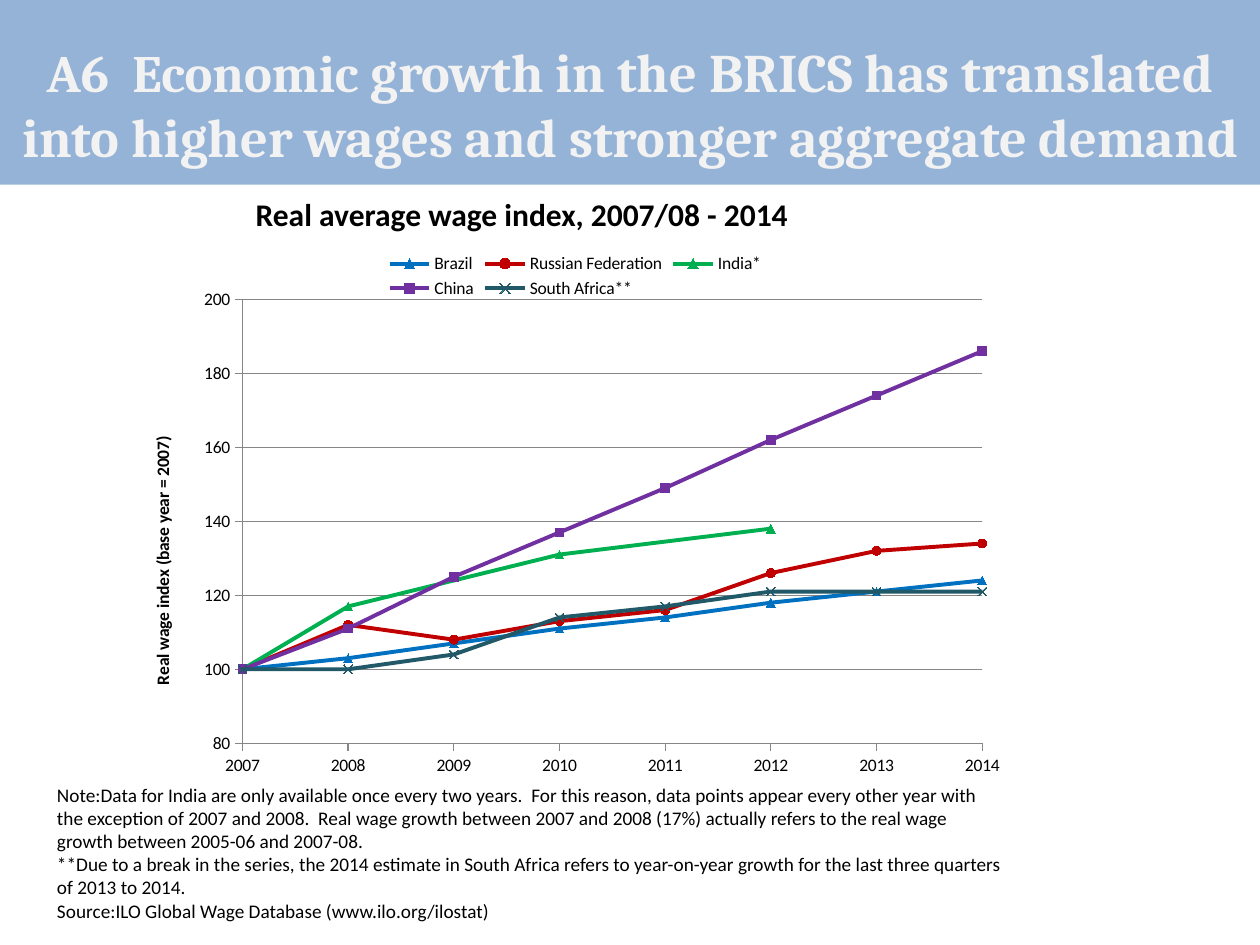
from dataclasses import dataclass

from lxml import etree
from pptx import Presentation
from pptx import util as u
from pptx.chart.data import CategoryChartData
from pptx.dml.color import RGBColor
from pptx.enum import chart as kinds, shapes, text
from pptx.oxml.ns import qn


@dataclass(frozen=True)
class Theme:
    banner: str = "95B3D7"
    light: str = "F2F2F2"
    ink: str = "000000"
    grid: str = "868686"
    heading_font: str = "Cambria"
    body_font: str = "Calibri"
    label_size: int = 30
    heading_size: int = 31
    caption_size: int = 18
    note_size: int = 11
    chart_size: int = 10
    line_width: float = 2.25
    marker_size: int = 5


YEARS = [str(year) for year in range(2007, 2015)]
MARK = kinds.XL_MARKER_STYLE
COUNTRIES = [
    ("Brazil", "0070C0", MARK.TRIANGLE, [100, 103, 107, 111, 114, 118, 121, 124]),
    ("Russian Federation", "C00000", MARK.CIRCLE, [100, 112, 108, 113, 116, 126, 132, 134]),
    ("India*", "00B050", MARK.TRIANGLE, [100, 117, None, 131, None, 138, None, None]),
    ("China", "7030A0", MARK.SQUARE, [100, 111, 125, 137, 149, 162, 174, 186]),
    ("South Africa**", "215968", MARK.X, [100, 100, 104, 114, 117, 121, 121, 121]),
]
NOTES = [
    "Note:Data for India are only available once every two years.  For this reason, data points "
    "appear every other year with the exception of 2007 and 2008.  Real wage growth between 2007 "
    "and 2008 (17%) actually refers to the real wage growth between 2005-06 and 2007-08.",
    "**Due to a break in the series, the 2014 estimate in South Africa refers to year-on-year "
    "growth for the last three quarters of 2013 to 2014.",
    "Source:ILO Global Wage Database (www.ilo.org/ilostat)",
]


def style_font(font, name, size, color, bold=False):
    font.name = name
    font.size = u.Pt(size)
    font.bold = bold
    font.color.rgb = RGBColor.from_string(color)


def add_span(para, words, **style):
    span = para.add_run()
    span.text = words
    style_font(span.font, **style)


def set_layout(parent, index, **values):
    for old in parent.findall(qn("c:layout")):
        parent.remove(old)
    layout = etree.Element(qn("c:layout"))
    manual = etree.SubElement(layout, qn("c:manualLayout"))
    for name, value in values.items():
        etree.SubElement(manual, qn("c:" + name)).set("val", str(value))
    parent.insert(index, layout)


def start_on_axis(axis):
    element = axis._element
    crossing = element.find(qn("c:crossBetween"))
    if crossing is None:
        crossing = etree.Element(qn("c:crossBetween"))
        element.find(qn("c:crosses")).addnext(crossing)
    crossing.set("val", "midCat")


class SlideBuilder:
    def __init__(self, page, theme):
        self.page = page
        self.theme = theme

    def banner(self, *frame):
        shape = self.page.shapes.add_shape(
            shapes.MSO_SHAPE.RECTANGLE, *map(u.Pt, frame))
        shape.shadow.inherit = False
        shape.fill.solid()
        shape.fill.fore_color.rgb = RGBColor.from_string(self.theme.banner)
        shape.line.fill.background()

    def text(self, frame, paragraphs, align=text.PP_ALIGN.LEFT,
             anchor=text.MSO_ANCHOR.TOP, **style):
        box = self.page.shapes.add_textbox(*map(u.Pt, frame)).text_frame
        box.word_wrap = True
        box.vertical_anchor = anchor
        for index, spans in enumerate(paragraphs):
            para = box.add_paragraph() if index else box.paragraphs[0]
            para.alignment = align
            for words, size in spans:
                add_span(para, words, size=size, **style)

    def line_chart(self, frame, years, countries, axis_title):
        theme = self.theme
        data = CategoryChartData(number_format="0")
        data.categories = years
        for name, _, _, values in countries:
            data.add_series(name, values)
        chart = self.page.shapes.add_chart(
            kinds.XL_CHART_TYPE.LINE_MARKERS, *map(u.Pt, frame), data).chart
        style_font(chart.font, theme.body_font, theme.chart_size, theme.ink)
        chart.has_title = False
        chart.has_legend = True
        chart.legend.position = kinds.XL_LEGEND_POSITION.TOP
        chart.legend.include_in_layout = False
        chart.plots[0].vary_by_categories = False
        for series, (_, color, mark, _) in zip(chart.plots[0].series, countries):
            self.country_line(series, RGBColor.from_string(color), mark)
        self.axes(chart, axis_title)
        space = chart._chartSpace
        space.find(".//" + qn("c:dispBlanksAs")).set("val", "span")
        set_layout(space.find(".//" + qn("c:plotArea")), 0, layoutTarget="inner",
                   xMode="edge", yMode="edge", x=0.123, y=0.109, w=0.838, h=0.812)

    def country_line(self, series, color, mark):
        series.smooth = False
        series.format.line.color.rgb = color
        series.format.line.width = u.Pt(self.theme.line_width)
        series.marker.style = mark
        series.marker.size = self.theme.marker_size
        look = series.marker.format
        look.line.color.rgb = color
        look.line.width = u.Pt(0.75)
        if mark == MARK.X:
            look.fill.background()
        else:
            look.fill.solid()
            look.fill.fore_color.rgb = color

    def axes(self, chart, title):
        theme = self.theme
        gray = RGBColor.from_string(theme.grid)
        for axis in (chart.category_axis, chart.value_axis):
            axis.major_tick_mark = kinds.XL_TICK_MARK.OUTSIDE
            axis.minor_tick_mark = kinds.XL_TICK_MARK.NONE
            axis.format.line.color.rgb = gray
            axis.format.line.width = u.Pt(0.75)
        axis = chart.value_axis
        axis.minimum_scale, axis.maximum_scale, axis.major_unit = 80, 200, 20
        axis.tick_labels.number_format = "0"
        axis.tick_labels.number_format_is_linked = False
        axis.has_major_gridlines = True
        axis.major_gridlines.format.line.color.rgb = gray
        axis.major_gridlines.format.line.width = u.Pt(0.75)
        start_on_axis(axis)
        add_span(axis.axis_title.text_frame.paragraphs[0], title, name=theme.body_font,
                 size=theme.chart_size, color=theme.ink, bold=True)
        set_layout(axis.axis_title._element, 1, xMode="edge", yMode="edge", x=0.016, y=0.354)


def main():
    theme = Theme()
    deck = Presentation()
    deck.slide_width, deck.slide_height = u.Pt(720), u.Pt(540)
    slide = SlideBuilder(deck.slides.add_slide(deck.slide_layouts[6]), theme)
    slide.banner(0, 0, 720, 105.5)
    slide.text((-2.5, 18, 725, 82), [[
        ("A6  Economic", theme.label_size),
        (" growth in the BRICS has translated into higher wages and stronger aggregate demand",
         theme.heading_size),
    ]], align=text.PP_ALIGN.CENTER, anchor=text.MSO_ANCHOR.MIDDLE,
        name=theme.heading_font, color=theme.light, bold=True)
    slide.text((139, 108, 420, 29),
               [[("Real average wage index, 2007/08 - 2014", theme.caption_size)]],
               name=theme.body_font, color=theme.ink, bold=True)
    slide.line_chart((76.5, 137, 504.5, 312.5), YEARS, COUNTRIES,
                     "Real wage index (base year = 2007)")
    slide.text((25.5, 444, 556, 87), [[(note, theme.note_size)] for note in NOTES],
               name=theme.body_font, color=theme.ink)
    deck.save("out.pptx")


if __name__ == "__main__":
    main()
